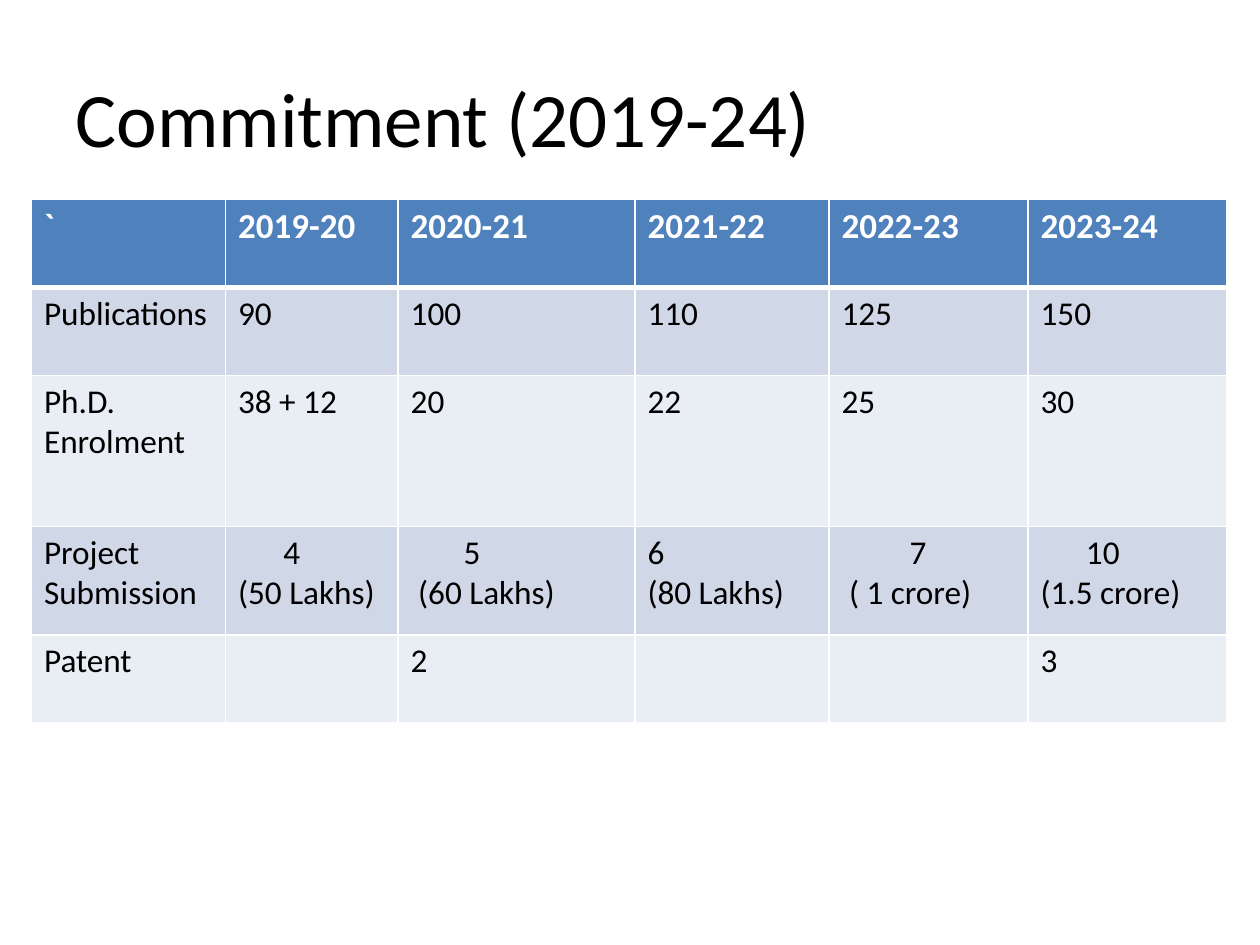
"""Build the five-year commitment slide with its target table."""
import lxml.etree
import pptx
import pptx.dml.color
import pptx.enum.text
import pptx.oxml.ns
import pptx.util

Inches = pptx.util.Inches
COLORS = {"header": "4F81BD", "odd": "D0D8E8", "even": "E9EDF4",
          "white": "FFFFFF", "black": "000000"}
COLUMN_WIDTHS = [1.54, 1.37, 1.88, 1.54, 1.58, 1.58]
ROW_HEIGHTS = [0.7, 0.7, 1.2, 0.86, 0.7]
ROWS = [
    ["`", "2019-20", "2020-21", "2021-22", "2022-23", "2023-24"],
    ["Publications", "90", "100", "110", "125", "150"],
    ["Ph.D. Enrolment", "38 + 12", "20", "22", "25", "30"],
    ["Project Submission", "4\n(50 Lakhs)", "5\n(60 Lakhs)", "6\n(80 Lakhs)",
     "7\n( 1 crore)", "10\n(1.5 crore)"],
    ["Patent", "", "2", "", "", "3"],
]
INDENTS = {(3, 1): [0.36, 0], (3, 2): [0.42, 0.06],
           (3, 4): [0.54, 0.06], (3, 5): [0.36, 0]}


class SlideBuilder:
    """Hold the style and the current slide."""

    header_format = {"name": "Calibri", "size": pptx.util.Pt(20), "bold": True}
    body_format = {"name": "Calibri", "size": pptx.util.Pt(19), "bold": False}
    title_format = {"name": "Calibri", "size": pptx.util.Pt(44), "bold": False}

    def __init__(self, deck):
        """Add a title-only slide to the deck."""
        self.page = deck.slides.add_slide(deck.slide_layouts[5])

    def add_text(self, frame, text, font_format, color, indents=()):
        """Add one paragraph per line, each with its left indent."""
        for index, line in enumerate(text.split("\n")):
            para = frame.add_paragraph() if index else frame.paragraphs[0]
            para.alignment = pptx.enum.text.PP_ALIGN.LEFT
            if indents:
                margin = Inches(indents[index])
                para._p.get_or_add_pPr().set("marL", str(margin))
            span = para.add_run()
            span.text = line
            for name, value in font_format.items():
                setattr(span.font, name, value)
            span.font.color.rgb = pptx.dml.color.RGBColor.from_string(COLORS[color])

    def title(self, text, bounds):
        """Place and fill the title placeholder."""
        box = self.page.shapes.title
        for name, value in zip(("left", "top", "width", "height"), bounds):
            setattr(box, name, Inches(value))
        box.text_frame.vertical_anchor = pptx.enum.text.MSO_ANCHOR.MIDDLE
        self.add_text(box.text_frame, text, self.title_format, "black")

    def borders(self, cell, widths):
        """Draw white cell borders with the given widths in points."""
        properties = cell._tc.get_or_add_tcPr()
        qn = pptx.oxml.ns.qn
        for side, width in widths.items():
            line = lxml.etree.SubElement(properties, qn("a:ln" + side),
                                         w=str(pptx.util.Pt(width)))
            fill = lxml.etree.SubElement(line, qn("a:solidFill"))
            lxml.etree.SubElement(fill, qn("a:srgbClr"), val=COLORS["white"])

    def table(self, rows, left, top):
        """Add the banded table."""
        grid = self.page.shapes.add_table(
            len(rows), len(COLUMN_WIDTHS), Inches(left), Inches(top),
            Inches(sum(COLUMN_WIDTHS)), Inches(sum(ROW_HEIGHTS))).table
        for column, width in zip(grid.columns, COLUMN_WIDTHS):
            column.width = Inches(width)
        for row, height in zip(grid.rows, ROW_HEIGHTS):
            row.height = Inches(height)
        for r, texts in enumerate(rows):
            band = "header" if r == 0 else "odd" if r % 2 else "even"
            font_format = self.body_format if r else self.header_format
            for c, text in enumerate(texts):
                cell = grid.cell(r, c)
                self.borders(cell, {"L": 1, "R": 1, "T": 3 if r == 1 else 1,
                                    "B": 3 if r == 0 else 1})
                cell.fill.solid()
                cell.fill.fore_color.rgb = pptx.dml.color.RGBColor.from_string(COLORS[band])
                if text:
                    self.add_text(cell.text_frame, text, font_format,
                                  "black" if r else "white", INDENTS.get((r, c), ()))


def main():
    """Build and save the deck."""
    deck = pptx.Presentation()
    deck.slide_width, deck.slide_height = Inches(10), Inches(7.5)
    builder = SlideBuilder(deck)
    builder.title("Commitment (2019-24)", (0.5, 0.3, 9, 1.25))
    builder.table(ROWS, 0.25, 1.58)
    deck.save("out.pptx")


if __name__ == "__main__":
    main()
